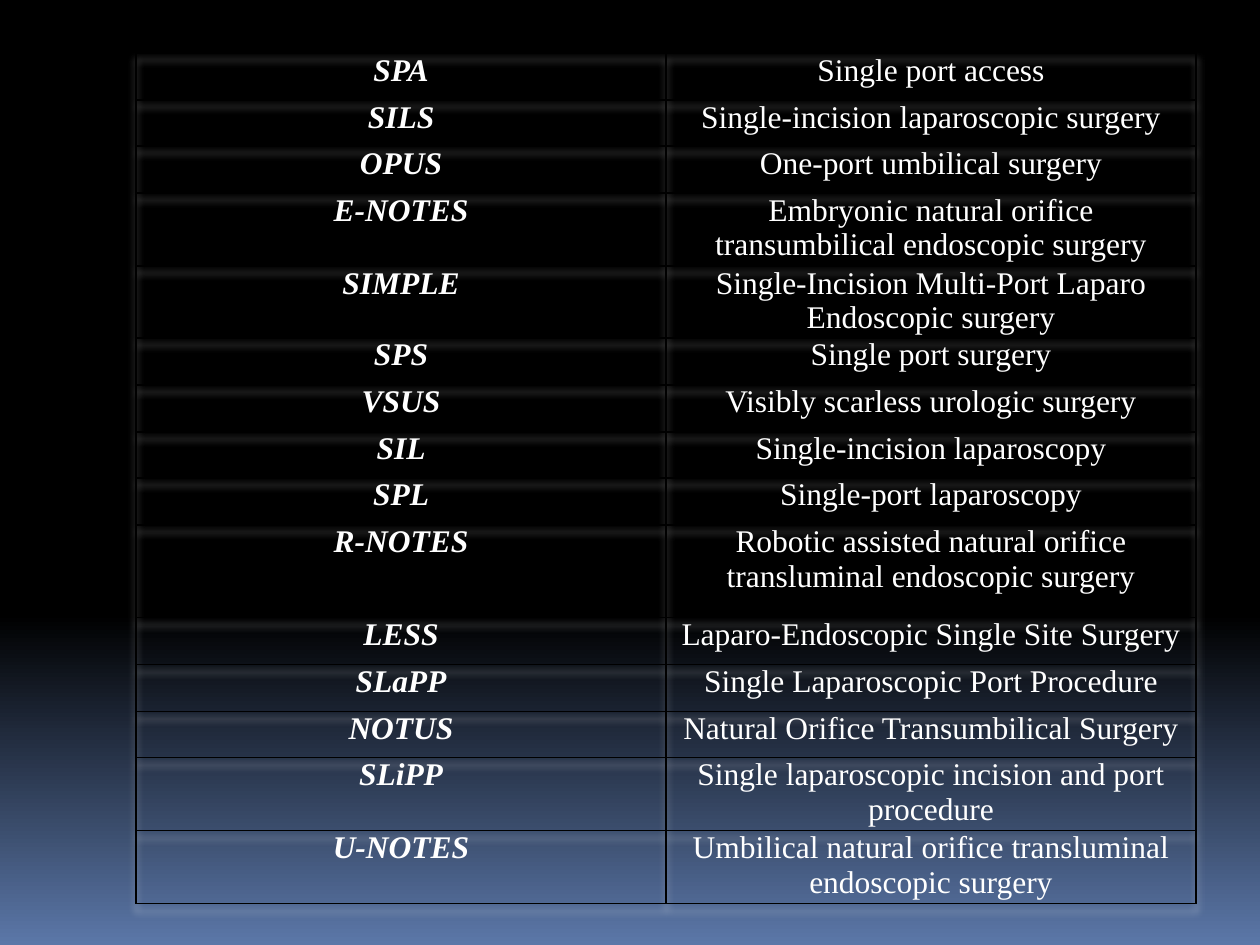
import itertools
from dataclasses import dataclass

import pptx
import pptx.dml.color
import pptx.enum.text
import pptx.oxml
import pptx.oxml.ns
import pptx.util

PX_PER_INCH = 126
NO_STYLE = "{2D5ABB26-0587-4C30-8999-92F81FD0307C}"


@dataclass(frozen=True)
class Theme:
    font: str = "Times New Roman"
    size: int = 18
    text: str = "FFFFFF"
    border: str = "000000"
    glow: str = "FFFFFF"
    sky: str = "000000"
    horizon: str = "5B77A8"


def px(n):
    return pptx.util.Emu(round(n * 914400 / PX_PER_INCH))


def rgb(value):
    return pptx.dml.color.RGBColor.from_string(value)


def element(xml):
    """Parse one DrawingML element; its root tag carries the {ns} slot."""
    return pptx.oxml.parse_xml(xml.replace("{ns}", pptx.oxml.ns.nsdecls("a")))


class Deck:
    def __init__(self, theme, width, height):
        self.theme = theme
        self.prs = pptx.Presentation()
        self.prs.slide_width, self.prs.slide_height = px(width), px(height)
        self.s = None

    def slide(self):
        self.s = self.prs.slides.add_slide(self.prs.slide_layouts[6])

    def background(self, start):
        fill = self.s.background.fill
        fill.gradient()
        fill.gradient_angle = 270
        stops = ((start, self.theme.sky), (1, self.theme.horizon))
        for stop, (position, color) in zip(fill.gradient_stops, stops):
            stop.position, stop.color.rgb = position, rgb(color)

    def table(self, left, top, widths, heights, rows):
        frame = self.s.shapes.add_table(len(rows), len(widths), px(left), px(top),
                                        px(sum(widths)), px(sum(heights)))
        table = frame.table
        table.first_row = table.horz_banding = False
        for column, width in zip(table.columns, widths):
            column.width = px(width)
        for row, height in zip(table.rows, heights):
            row.height = px(height)
        for row, texts in zip(table.rows, rows):
            for i, (cell, text) in enumerate(zip(row.cells, texts)):
                self.cell(cell, text, strong=i == 0)
        self.glow(table)

    def glow(self, table):
        """Soft light shadow below the grid lines and the text."""
        pr = table._tbl.tblPr
        pr.find(pptx.oxml.ns.qn("a:tableStyleId")).text = NO_STYLE
        pr.insert(0, element(
            '<a:effectLst {ns}><a:outerShdw blurRad="50800" dist="50800" dir="5400000">'
            f'<a:srgbClr val="{self.theme.glow}"><a:alpha val="40000"/></a:srgbClr>'
            '</a:outerShdw></a:effectLst>'))

    def cell(self, cell, text, strong):
        cell.margin_left = cell.margin_right = px(9)
        cell.margin_top = cell.margin_bottom = 0
        cell.fill.background()
        p = cell.text_frame.paragraphs[0]
        p.alignment = pptx.enum.text.PP_ALIGN.CENTER
        r = p.add_run()
        r.text = text
        r.font.name, r.font.size = self.theme.font, pptx.util.Pt(self.theme.size)
        r.font.bold = r.font.italic = strong
        r.font.color.rgb = rgb(self.theme.text)
        # Borders come before the fill in the cell properties
        for i, side in enumerate(("lnL", "lnR", "lnT", "lnB")):
            cell._tc.get_or_add_tcPr().insert(i, element(
                f'<a:{side} {{ns}} w="12700"><a:solidFill>'
                f'<a:srgbClr val="{self.theme.border}"/></a:solidFill></a:{side}>'))


# Abbreviation, meaning, lines of height
TERMS = [
    ("SPA", "Single port access", 1),
    ("SILS", "Single-incision laparoscopic surgery", 1),
    ("OPUS", "One-port umbilical surgery", 1),
    ("E-NOTES", "Embryonic natural orifice transumbilical endoscopic surgery", 2),
    ("SIMPLE", "Single-Incision Multi-Port Laparo Endoscopic surgery", 2),
    ("SPS", "Single port surgery", 1),
    ("VSUS", "Visibly scarless urologic surgery", 1),
    ("SIL", "Single-incision laparoscopy", 1),
    ("SPL", "Single-port laparoscopy", 1),
    ("R-NOTES", "Robotic assisted natural orifice transluminal endoscopic surgery", 3),
    ("LESS", "Laparo-Endoscopic Single Site Surgery", 1),
    ("SLaPP", "Single Laparoscopic Port Procedure", 1),
    ("NOTUS", "Natural Orifice Transumbilical Surgery", 1),
    ("SLiPP", "Single laparoscopic incision and port procedure", 2),
    ("U-NOTES", "Umbilical natural orifice transluminal endoscopic surgery", 2),
]
ROW_HEIGHT = {1: 46.67, 2: 72.67, 3: 93.33}


def main():
    deck = Deck(Theme(), 1260, 945)
    deck.slide()
    deck.background(start=0.65)

    # Row edges fall on whole pixels
    edges = [round(y) for y in itertools.accumulate(
        (ROW_HEIGHT[lines] for *_, lines in TERMS), initial=0)]
    heights = [b - a for a, b in zip(edges, edges[1:])]
    deck.table(136, 53, [530, 530], heights, [term[:2] for term in TERMS])

    deck.prs.save("out.pptx")


if __name__ == "__main__":
    main()
